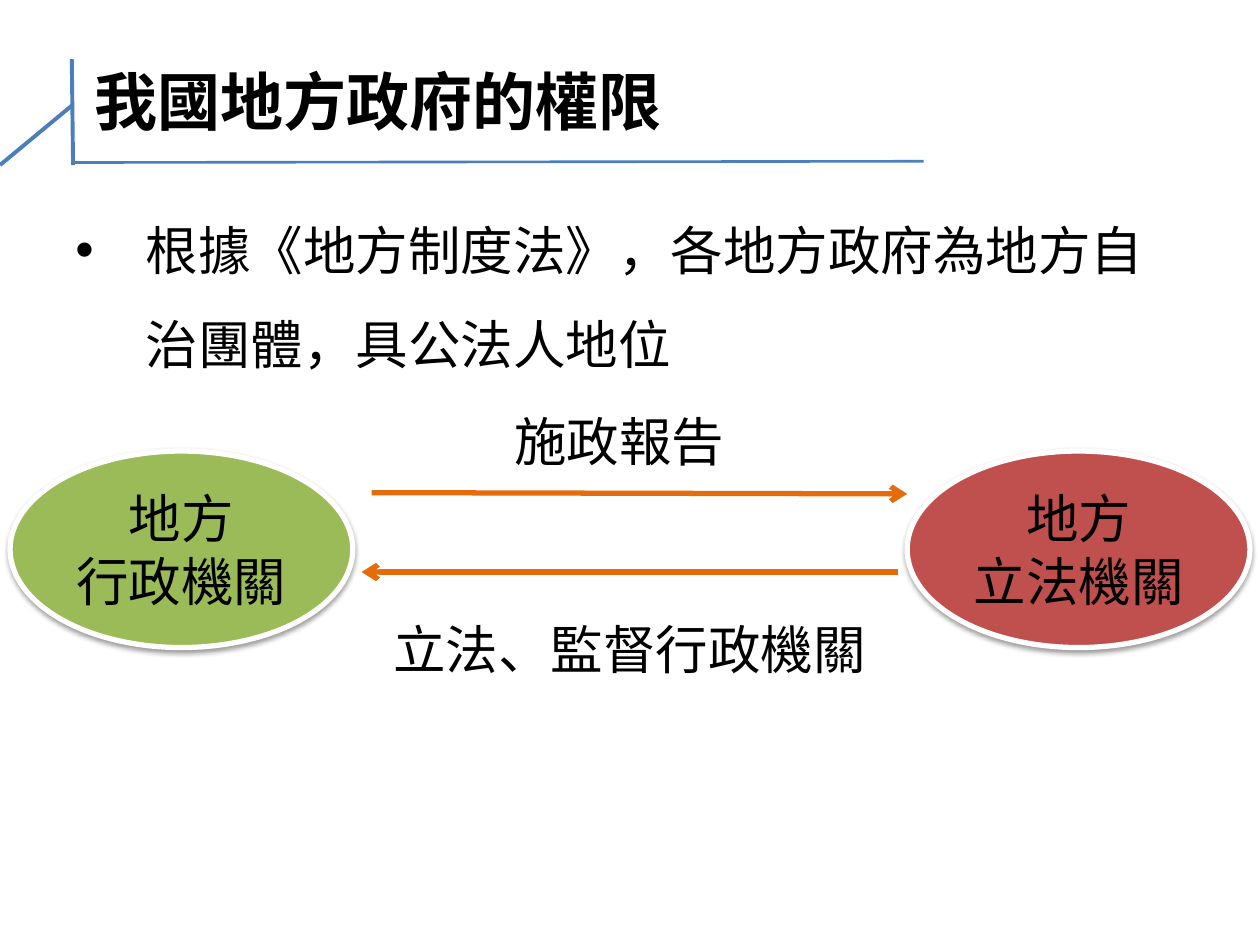
from lxml.etree import SubElement
from pptx import Presentation
from pptx.dml.color import RGBColor
from pptx.enum.shapes import MSO_CONNECTOR, MSO_SHAPE
from pptx.enum.text import MSO_ANCHOR, PP_ALIGN
from pptx.oxml.ns import qn
from pptx.util import Inches, Pt

FONT = "Noto Sans CJK SC"
BLACK = RGBColor(0x00, 0x00, 0x00)
WHITE = RGBColor(0xFF, 0xFF, 0xFF)
GREEN = RGBColor(0x9B, 0xBB, 0x59)
RED = RGBColor(0xC0, 0x50, 0x4D)
ORANGE = RGBColor(0xE4, 0x6C, 0x0A)
BLUE = RGBColor(0x4B, 0x7E, 0xBC)

WIDTH, HEIGHT = 10, 7.5
ORGAN_WIDTH, ORGAN_HEIGHT, ORGAN_TOP = 2.72, 1.56, 3.58
ORGAN_MARGIN = 0.08
LABEL_WIDTH, LABEL_HEIGHT = 4.09, 0.61


def write(frame, text, size=30, bold=False, align=PP_ALIGN.CENTER):
    frame.word_wrap = True
    frame.text = text
    for paragraph in frame.paragraphs:
        paragraph.alignment = align
        for run in paragraph.runs:
            run.font.name = FONT
            run.font.size = Pt(size)
            run.font.bold = bold
            run.font.color.rgb = BLACK
            SubElement(run.font._element, qn("a:ea"), typeface=FONT)


def add_text(slide, left, top, width, height, text, **style):
    box = slide.shapes.add_textbox(*map(Inches, (left, top, width, height)))
    write(box.text_frame, text, **style)
    return box.text_frame


def add_bullet(paragraph, indent):
    properties = paragraph._p.get_or_add_pPr()
    properties.set("marL", str(Inches(indent)))
    properties.set("indent", str(-Inches(indent)))
    SubElement(properties, qn("a:buFont"), typeface="Arial")
    SubElement(properties, qn("a:buChar"), char="•")


def add_soft_shadow(shape):
    shape.shadow.inherit = False
    effects = shape._element.spPr.find(qn("a:effectLst"))
    shadow = SubElement(effects, qn("a:outerShdw"), blurRad=str(Pt(3.1)),
                        dist=str(Pt(1.6)), dir="5400000", rotWithShape="0")
    color = SubElement(shadow, qn("a:srgbClr"), val=str(BLACK))
    SubElement(color, qn("a:alpha"), val="38000")


def add_organ(slide, left, name, fill):
    organ = slide.shapes.add_shape(
        MSO_SHAPE.OVAL, *map(Inches, (left, ORGAN_TOP, ORGAN_WIDTH, ORGAN_HEIGHT)))
    organ.fill.solid()
    organ.fill.fore_color.rgb = fill
    organ.line.color.rgb = WHITE
    organ.line.width = Pt(3)
    add_soft_shadow(organ)
    organ.text_frame.vertical_anchor = MSO_ANCHOR.MIDDLE
    write(organ.text_frame, name)


def add_line(slide, start, end, color, weight, arrow=False):
    line = slide.shapes.add_connector(
        MSO_CONNECTOR.STRAIGHT, *map(Inches, (*start, *end)))
    line.line.color.rgb = color
    line.line.width = Pt(weight)
    if arrow:
        SubElement(line.line._get_or_add_ln(), qn("a:tailEnd"), type="arrow")
    SubElement(line._element.spPr, qn("a:effectLst"))


def add_title(slide):
    title = add_text(slide, 0.65, 0.44, 9, 0.71, "我國地方政府的權限",
                     size=36, bold=True, align=PP_ALIGN.LEFT)
    title.vertical_anchor = MSO_ANCHOR.MIDDLE
    add_line(slide, (0, 1.31), (0.58, 0.83), BLUE, 2.25)
    add_line(slide, (0.57, 0.47), (0.58, 1.31), BLUE, 2.25)
    add_line(slide, (0.58, 1.29), (7.33, 1.28), BLUE, 1.5)


def add_statement(slide):
    statement = add_text(slide, 0.5, 1.43, 9, 5.15,
                         "根據《地方制度法》，各地方政府為地方自治團體，具公法人地位",
                         align=PP_ALIGN.LEFT)
    paragraph = statement.paragraphs[0]
    paragraph.line_spacing = 1.5
    add_bullet(paragraph, 0.56)


def add_relation(slide, start, end, label_left, label_top, label):
    add_line(slide, start, end, ORANGE, 3, arrow=True)
    add_text(slide, label_left, label_top, LABEL_WIDTH, LABEL_HEIGHT, label)


def main():
    deck = Presentation()
    deck.slide_width, deck.slide_height = Inches(WIDTH), Inches(HEIGHT)
    slide = deck.slides.add_slide(deck.slide_layouts[6])
    add_title(slide)
    add_statement(slide)
    add_organ(slide, ORGAN_MARGIN, "地方\n行政機關", GREEN)
    add_organ(slide, WIDTH - ORGAN_MARGIN - ORGAN_WIDTH, "地方\n立法機關", RED)
    add_relation(slide, (2.95, 3.91), (7.2, 3.92), 2.87, 3.2, "施政報告")
    add_relation(slide, (7.13, 4.54), (2.87, 4.54), 2.95, 4.85, "立法、監督行政機關")
    deck.save("out.pptx")


if __name__ == "__main__":
    main()
